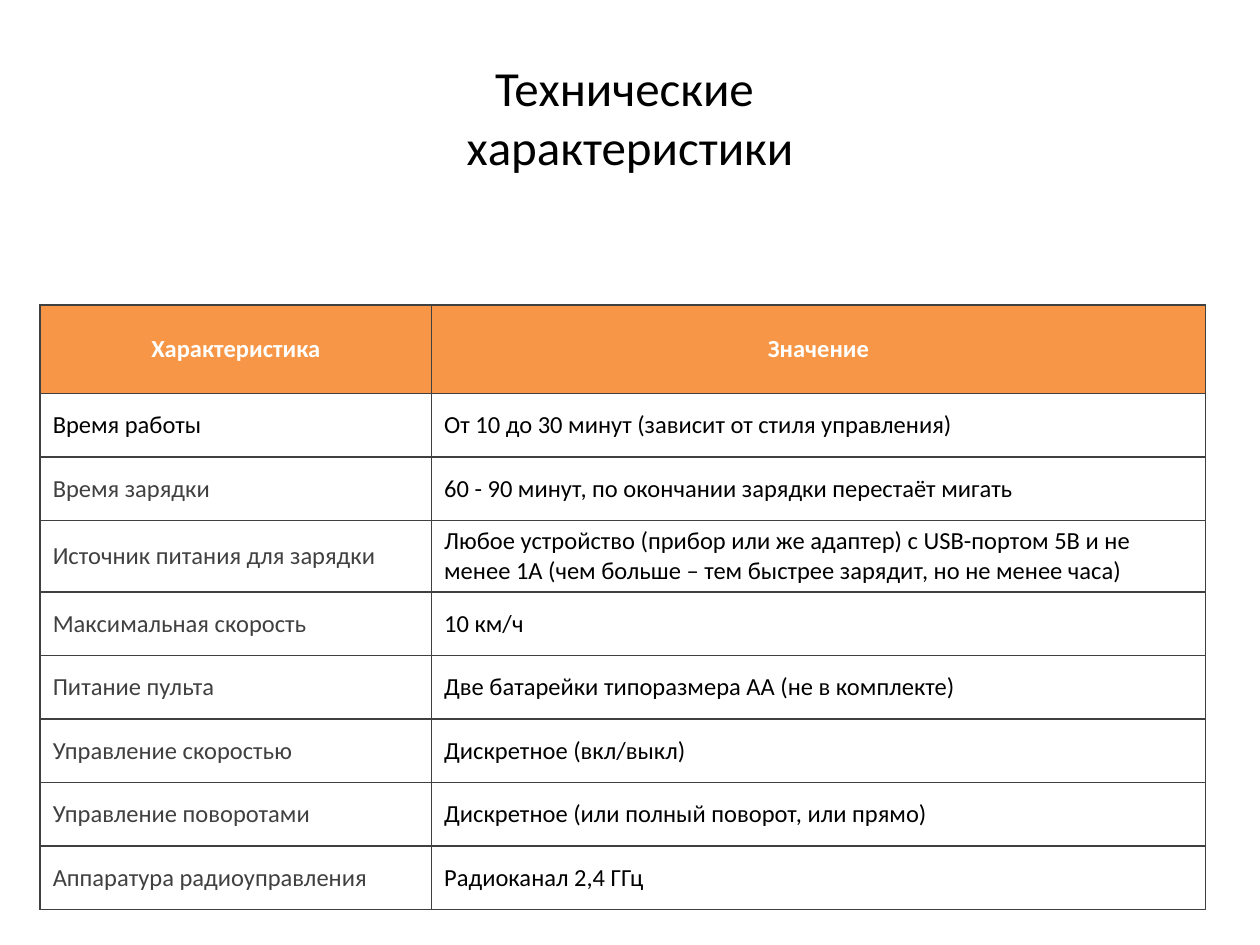
from dataclasses import dataclass
from lxml import etree
from pptx import Presentation
from pptx.dml.color import RGBColor
from pptx.enum import text
from pptx.oxml import ns
from pptx.util import Cm, Pt

TITLE = "Технические \vхарактеристики"
HEAD = ("Характеристика", "Значение")
ROWS = [
    ("Время работы", "От 10 до 30 минут (зависит от стиля управления)"),
    ("Время зарядки", "60 - 90 минут, по окончании зарядки перестаёт мигать"),
    ("Источник питания для зарядки",
     "Любое устройство (прибор или же адаптер) с USB-портом 5В и не менее 1А "
     "(чем больше – тем быстрее зарядит, но не менее часа)"),
    ("Максимальная скорость", "10 км/ч"),
    ("Питание пульта", "Две батарейки типоразмера АА (не в комплекте)"),
    ("Управление скоростью", "Дискретное (вкл/выкл)"),
    ("Управление поворотами", "Дискретное (или полный поворот, или прямо)"),
    ("Аппаратура радиоуправления", "Радиоканал 2,4 ГГц"),
]
COLS = (7.89, 15.6)
HEAD_H, ROW_H = 1.78, 1.28


@dataclass(frozen=True)
class Theme:
    face: str = "Calibri"
    large: int = 28
    small: int = 14
    black: str = "000000"
    grey: str = "404040"
    white: str = "FFFFFF"
    orange: str = "F79646"
    rule: int = 1


theme = Theme()


def style(para, size, color, bold=False, center=False):
    font = para.font
    font.name, font.size, font.bold = theme.face, Pt(size), bold
    font.color.rgb = RGBColor.from_string(color)
    para.alignment = text.PP_ALIGN.CENTER if center else text.PP_ALIGN.LEFT


def border(cell):
    props = cell._tc.get_or_add_tcPr()
    for spot, side in enumerate(("lnL", "lnR", "lnT", "lnB")):
        line = etree.Element(ns.qn(f"a:{side}"), w=str(Pt(theme.rule)))
        fill = etree.SubElement(line, ns.qn("a:solidFill"))
        etree.SubElement(fill, ns.qn("a:srgbClr"), val=theme.grey)
        props.insert(spot, line)


def add_title(slide):
    box = slide.shapes.add_textbox(Cm(1.27), Cm(0.76), Cm(22.86), Cm(3.18))
    frame = box.text_frame
    frame.word_wrap = True
    frame.vertical_anchor = text.MSO_ANCHOR.MIDDLE
    frame.text = TITLE
    style(frame.paragraphs[0], theme.large, theme.black, center=True)


def add_specs(slide):
    data = [HEAD, *ROWS]
    high = HEAD_H + ROW_H * len(ROWS)
    grid = slide.shapes.add_table(
        len(data), len(COLS), Cm(0.81), Cm(6.15), Cm(sum(COLS)), Cm(high)).table
    for col, width in zip(grid.columns, COLS):
        col.width = Cm(width)
    for r, row in enumerate(data):
        head = r == 0
        grid.rows[r].height = Cm(HEAD_H if head else ROW_H)
        for c, words in enumerate(row):
            cell = grid.cell(r, c)
            cell.text = words
            cell.vertical_anchor = text.MSO_ANCHOR.MIDDLE
            cell.fill.solid()
            cell.fill.fore_color.rgb = RGBColor.from_string(
                theme.orange if head else theme.white)
            label = c == 0 and r > 1
            color = theme.white if head else theme.grey if label else theme.black
            style(cell.text_frame.paragraphs[0], theme.small, color, head, head)
            border(cell)


def main():
    deck = Presentation()
    deck.slide_width, deck.slide_height = Cm(25.4), Cm(19.05)
    slide = deck.slides.add_slide(deck.slide_layouts[6])
    add_title(slide)
    add_specs(slide)
    deck.save("out.pptx")


if __name__ == "__main__":
    main()
